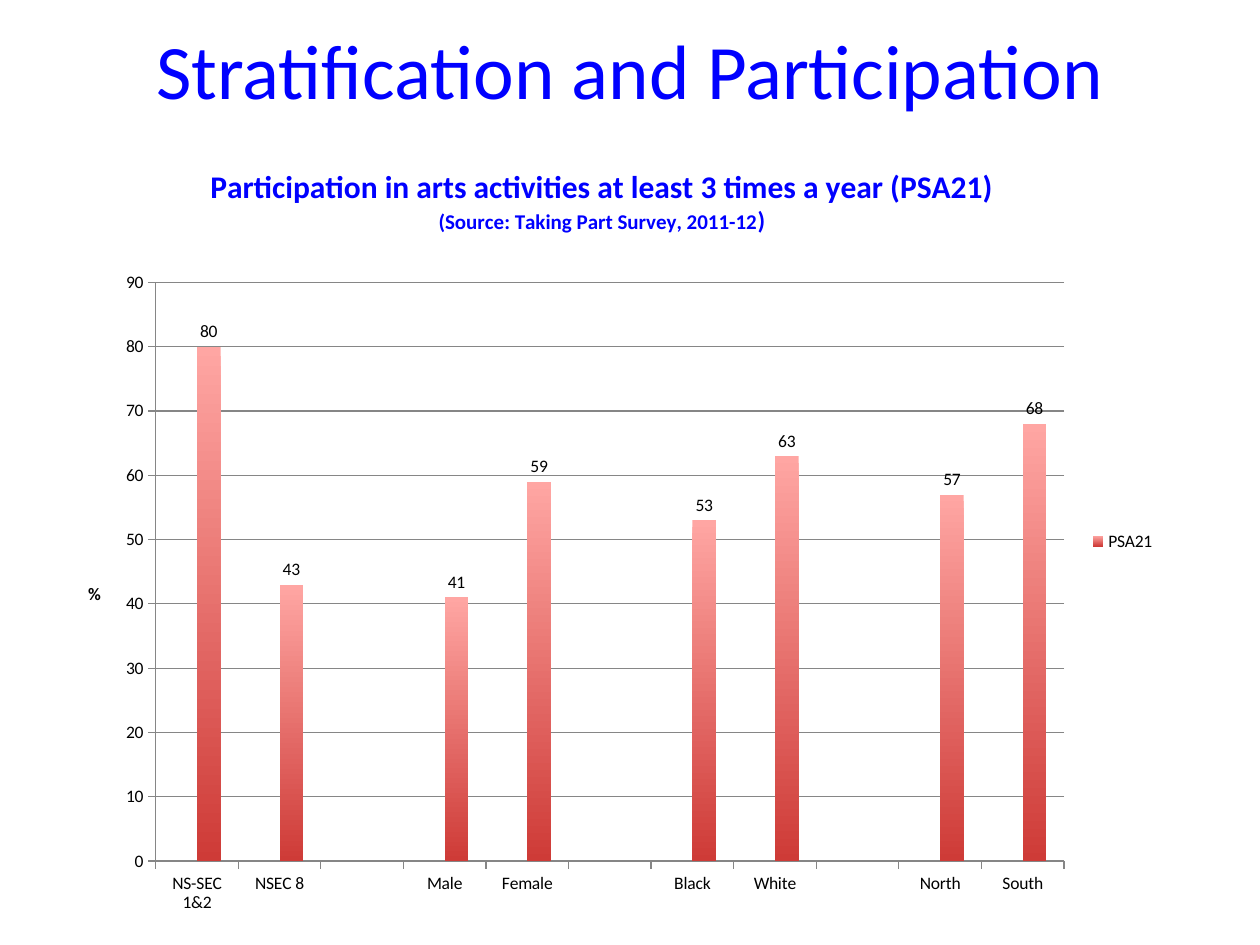
from dataclasses import dataclass

from lxml import etree
from pptx import Presentation
from pptx.chart.data import CategoryChartData
from pptx.dml.color import RGBColor
from pptx.enum.chart import XL_CHART_TYPE, XL_LABEL_POSITION, XL_LEGEND_POSITION, XL_TICK_MARK
from pptx.enum.text import MSO_ANCHOR, PP_ALIGN
from pptx.oxml.ns import qn
from pptx.util import Cm, Pt

COLUMNS = XL_CHART_TYPE.COLUMN_CLUSTERED
OUTSIDE_END = XL_LABEL_POSITION.OUTSIDE_END
LEGEND_RIGHT = XL_LEGEND_POSITION.RIGHT
TICK_OUTSIDE = XL_TICK_MARK.OUTSIDE
MIDDLE = MSO_ANCHOR.MIDDLE
CENTER = PP_ALIGN.CENTER


@dataclass(frozen=True)
class Theme:
    font: str = "Calibri"
    blue: RGBColor = RGBColor(0x00, 0x00, 0xFF)
    black: RGBColor = RGBColor(0x00, 0x00, 0x00)
    gray: RGBColor = RGBColor(0x86, 0x86, 0x86)
    bar_top: RGBColor = RGBColor(0xFF, 0xA6, 0xA3)
    bar_bottom: RGBColor = RGBColor(0xCE, 0x3B, 0x37)
    unused: RGBColor = RGBColor(0x4F, 0x81, 0xBD)
    title_size: Pt = Pt(44)
    chart_title_size: Pt = Pt(18)
    source_size: Pt = Pt(12)
    bracket_size: Pt = Pt(14)
    label_size: Pt = Pt(10)


THEME = Theme()
CATEGORIES = ["NS-SEC 1&2", "NSEC 8", "", "Male", "Female", "",
              "Black", "White", "", "North", "South"]
PARTICIPATION = [80, 43, None, 41, 59, None, 53, 63, None, 57, 68]


def style_font(font, size, color, bold=False):
    font.name = THEME.font
    font.size = size
    font.bold = bold
    font.color.rgb = color


def add_title(slide, text):
    shape = slide.shapes.add_textbox(Cm(1.27), Cm(0.2), Cm(22.86), Cm(2.36))
    frame = shape.text_frame
    frame.word_wrap = True
    frame.vertical_anchor = MIDDLE
    paragraph = frame.paragraphs[0]
    paragraph.text = text
    paragraph.alignment = CENTER
    style_font(paragraph.font, THEME.title_size, THEME.blue)


def place(element, index, **fractions):
    layout = element.find(qn("c:layout"))
    if layout is None:
        layout = etree.Element(qn("c:layout"))
        element.insert(index, layout)
    manual = etree.SubElement(layout, qn("c:manualLayout"))
    if element.tag == qn("c:plotArea"):
        etree.SubElement(manual, qn("c:layoutTarget"), val="inner")
    for mode in ("xMode", "yMode"):
        etree.SubElement(manual, qn(f"c:{mode}"), val="edge")
    for name, value in fractions.items():
        etree.SubElement(manual, qn(f"c:{name}"), val=str(value))


def add_chart_title(chart):
    frame = chart.chart_title.text_frame
    heading = frame.paragraphs[0]
    heading.text = "Participation in arts activities at least 3 times a year (PSA21)"
    style_font(heading.font, THEME.chart_title_size, THEME.blue, bold=True)
    source = frame.add_paragraph()
    style_font(source.font, THEME.source_size, THEME.blue, bold=True)
    for text, size in (("(Source: Taking Part Survey, 2011-12", THEME.source_size),
                       (")", THEME.bracket_size)):
        run = source.add_run()
        run.text = text
        style_font(run.font, size, THEME.blue, bold=True)
    place(chart.chart_title._element, 1, x=0.13, y=0.01)


def style_line(line):
    line.color.rgb = THEME.gray
    line.width = Pt(0.75)


def style_axes(chart):
    for axis in (chart.category_axis, chart.value_axis):
        axis.major_tick_mark = TICK_OUTSIDE
        style_line(axis.format.line)
    axis = chart.value_axis
    axis.minimum_scale, axis.maximum_scale, axis.major_unit = 0, 90, 10
    axis.has_major_gridlines = True
    style_line(axis.major_gridlines.format.line)
    title = axis.axis_title
    paragraph = title.text_frame.paragraphs[0]
    paragraph.text = "%"
    style_font(paragraph.font, THEME.label_size, THEME.black, bold=True)
    body = title._element.find(".//" + qn("a:bodyPr"))
    body.set("rot", "0")
    body.set("vert", "horz")
    place(title._element, 1, x=0.02, y=0.55)


def style_series(plot):
    plot.gap_width = 150
    plot.overlap = 0
    plot.vary_by_categories = False
    for series in plot.series:
        labels = series.data_labels
        labels.show_value = True
        labels.position = OUTSIDE_END
    empty, participation = plot.series
    empty.format.fill.solid()
    empty.format.fill.fore_color.rgb = THEME.unused
    fill = participation.format.fill
    fill.gradient()
    fill.gradient_angle = 270
    for stop, color in zip(fill.gradient_stops, (THEME.bar_top, THEME.bar_bottom)):
        stop.color.rgb = color


def add_legend(chart):
    chart.has_legend = True
    legend = chart.legend
    legend.position = LEGEND_RIGHT
    legend.include_in_layout = False
    place(legend._element, 1, x=0.93, y=0.48, w=0.06, h=0.04)
    entry = etree.Element(qn("c:legendEntry"))
    etree.SubElement(entry, qn("c:idx"), val="0")
    etree.SubElement(entry, qn("c:delete"), val="1")
    legend._element.insert(1, entry)


def add_participation_chart(slide):
    data = CategoryChartData()
    data.categories = CATEGORIES
    data.add_series("Series 1", [None] * len(CATEGORIES))
    data.add_series("PSA21", PARTICIPATION)
    chart = slide.shapes.add_chart(
        COLUMNS, Cm(1.27), Cm(3.1), Cm(22.25), Cm(15.62), data).chart
    style_font(chart.font, THEME.label_size, THEME.black)
    add_chart_title(chart)
    style_axes(chart)
    style_series(chart.plots[0])
    add_legend(chart)
    plot_area = chart._chartSpace.find(".//" + qn("c:plotArea"))
    place(plot_area, 0, x=0.084, y=0.166, w=0.823, h=0.747)


def main():
    presentation = Presentation()
    presentation.slide_width = Cm(25.4)
    presentation.slide_height = Cm(19.05)
    slide = presentation.slides.add_slide(presentation.slide_layouts[6])
    add_title(slide, "Stratification and Participation")
    add_participation_chart(slide)
    presentation.save("out.pptx")


if __name__ == "__main__":
    main()
